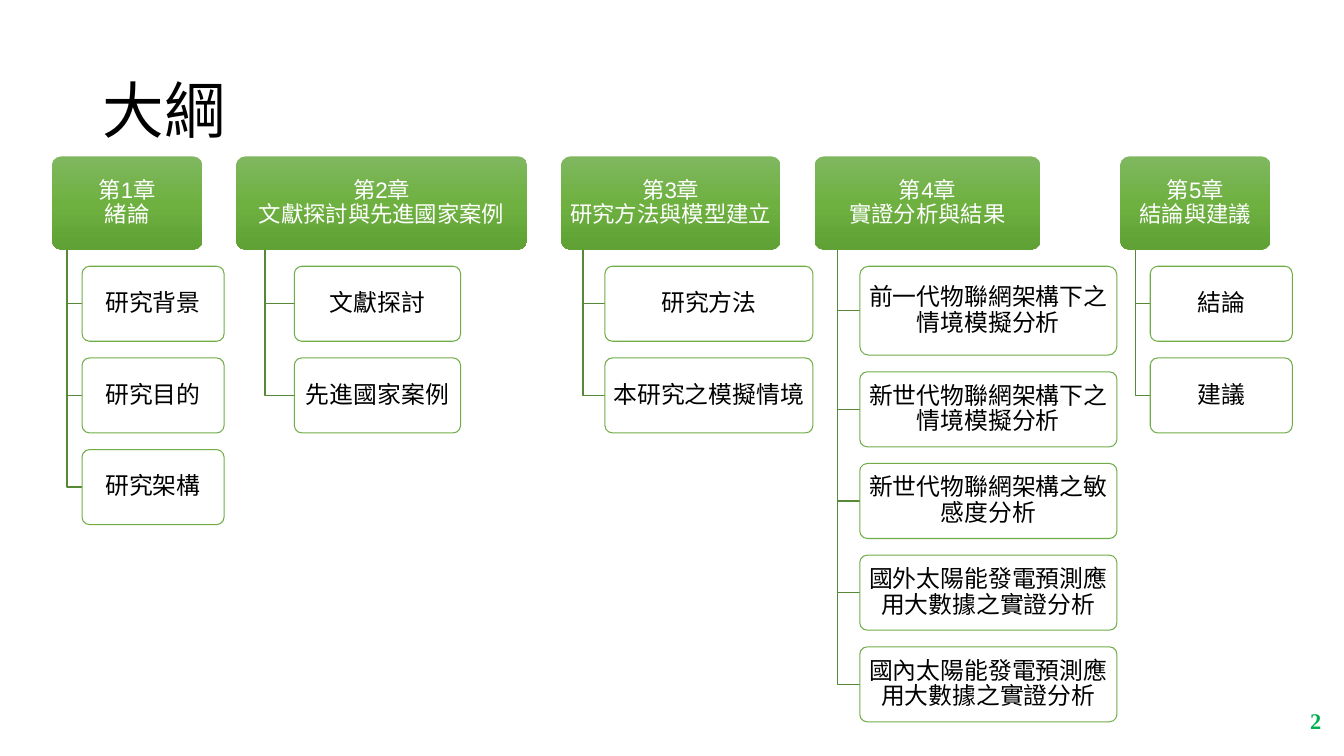
from copy import deepcopy
from dataclasses import dataclass

from pptx import Presentation
from pptx.dml.color import RGBColor
from pptx.enum.shapes import MSO_SHAPE
from pptx.enum.text import MSO_ANCHOR, MSO_AUTO_SIZE, PP_ALIGN
from pptx.oxml.ns import qn
from pptx.util import Cm, Pt

ROUND = MSO_SHAPE.ROUNDED_RECTANGLE
MIDDLE = MSO_ANCHOR.MIDDLE
NO_FIT = MSO_AUTO_SIZE.NONE
LEFT, CENTER, RIGHT = PP_ALIGN.LEFT, PP_ALIGN.CENTER, PP_ALIGN.RIGHT


@dataclass(frozen=True)
class Theme:
    sans: str = "Arial"
    serif: str = "Times New Roman"
    black: str = "000000"
    white: str = "FFFFFF"
    edge: str = "70AD47"
    stem: str = "568935"
    page: str = "00B050"
    fade: tuple = ("7FB75F", "6EB141", "5FA134")
    title: int = 44
    head: int = 16
    item: int = 17
    number: int = 16


THEME = Theme()

# Rows of the outline, in centimetres
HEAD_TOP, HEAD_H = 3.94, 2.35
ITEM_H, TALL_H, GAP = 1.89, 2.24, 0.42

# Left edge, head width, item width, first item height, head text, items
CHAPTERS = [
    (1.31, 3.79, 3.58, ITEM_H, "第1章\v緒論",
     ["研究背景", "研究目的", "研究架構"]),
    (5.95, 7.34, 4.19, ITEM_H, "第2章\v文獻探討與先進國家案例",
     ["文獻探討", "先進國家案例"]),
    (14.14, 5.53, 5.24, ITEM_H, "第3章\v研究方法與模型建立",
     ["研究方法", "本研究之模擬情境"]),
    (20.53, 5.69, 6.48, TALL_H, "第4章\v實證分析與結果",
     ["前一代物聯網架構下之情境模擬分析",
      "新世代物聯網架構下之情境模擬分析",
      "新世代物聯網架構之敏感度分析",
      "國外太陽能發電預測應用大數據之實證分析",
      "國內太陽能發電預測應用大數據之實證分析"]),
    (28.23, 3.79, 3.58, ITEM_H, "第5章\v結論與建議",
     ["結論", "建議"]),
]


def rgb(code):
    return RGBColor.from_string(code)


def write(shape, text, face, size, color, align, bold=False, space=0.9):
    frame = shape.text_frame
    frame.word_wrap = True
    frame.auto_size = NO_FIT
    frame.vertical_anchor = MIDDLE
    para = frame.paragraphs[0]
    para.text = text
    para.alignment = align
    para.line_spacing = space
    font = para.font
    font.name, font.size, font.bold = face, Pt(size), bold
    font.color.rgb = rgb(color)


def add_box(slide, left, top, width, height, text, size, color):
    box = slide.shapes.add_shape(
        ROUND, Cm(left), Cm(top), Cm(width), Cm(height))
    box.adjustments[0] = 0.1
    box.shadow.inherit = False
    frame = box.text_frame
    frame.margin_left = frame.margin_right = Cm(0.15)
    frame.margin_top = frame.margin_bottom = Cm(0.1)
    write(box, text, THEME.sans, size, color, CENTER)
    return box


def add_head(slide, left, width, text):
    box = add_box(slide, left, HEAD_TOP, width, HEAD_H, text,
                  THEME.head, THEME.white)
    box.line.fill.background()
    fill = box.fill
    fill.gradient()
    fill.gradient_angle = 270
    # The preset gradient has two stops; a third is needed
    stops = box._element.spPr.find(".//" + qn("a:gsLst"))
    stops.append(deepcopy(stops[0]))
    for i, (stop, code) in enumerate(zip(fill.gradient_stops, THEME.fade)):
        stop.position = i / 2
        stop.color.rgb = rgb(code)


def add_item(slide, left, top, width, height, text):
    box = add_box(slide, left, top, width, height, text,
                  THEME.item, THEME.black)
    box.fill.solid()
    box.fill.fore_color.rgb = rgb(THEME.white)
    tint = box._element.spPr.find(qn("a:solidFill")).find(qn("a:srgbClr"))
    tint.makeelement(qn("a:alpha"))
    alpha = tint.makeelement(qn("a:alpha"), {"val": "90000"})
    tint.append(alpha)
    box.line.color.rgb = rgb(THEME.edge)
    box.line.width = Pt(0.75)


def add_elbow(slide, stem, top, end, mid):
    pen = slide.shapes.build_freeform(Cm(stem), Cm(top))
    pen.add_line_segments(
        [(Cm(stem), Cm(mid)), (Cm(end), Cm(mid))], close=False)
    elbow = pen.convert_to_shape()
    elbow.shadow.inherit = False
    elbow.fill.background()
    elbow.line.color.rgb = rgb(THEME.stem)
    elbow.line.width = Pt(1)


def add_chapter(slide, left, width, wide, first, head, items):
    add_head(slide, left, width, head)
    base = HEAD_TOP + HEAD_H
    stem, edge = left + width / 10, left + width / 5
    top = base + GAP
    for i, text in enumerate(items):
        height = ITEM_H if i else first
        add_elbow(slide, stem, base, edge, top + height / 2)
        add_item(slide, edge, top, wide, height, text)
        top += height + GAP


def add_title(slide, text):
    title = slide.shapes.title
    title.left, title.top = Cm(2.33), Cm(1.01)
    title.width, title.height = Cm(29.21), Cm(3.68)
    write(title, text, THEME.serif, THEME.title, THEME.black, LEFT)


def add_number(slide, text):
    box = slide.shapes.add_textbox(Cm(32.31), Cm(17.65), Cm(1.24), Cm(1.02))
    write(box, text, THEME.serif, THEME.number, THEME.page, RIGHT,
          bold=True, space=1.0)


def main():
    deck = Presentation()
    deck.slide_width, deck.slide_height = Cm(33.87), Cm(19.05)
    slide = deck.slides.add_slide(deck.slide_layouts[5])
    add_title(slide, "大綱")
    for chapter in CHAPTERS:
        add_chapter(slide, *chapter)
    add_number(slide, "2")
    deck.save("out.pptx")


if __name__ == "__main__":
    main()
